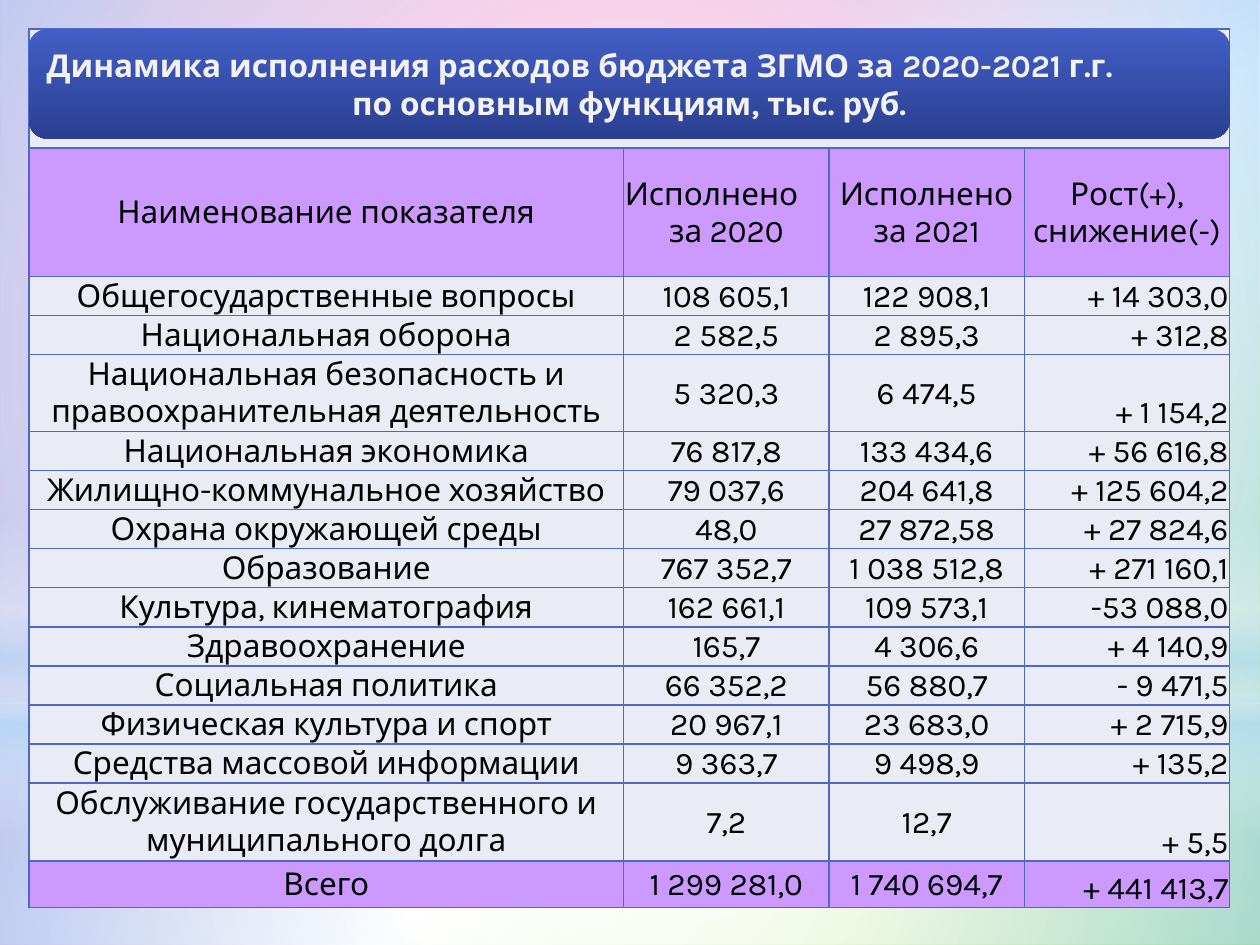
"""Build the budget spending slide: soft backdrop, table of figures and title banner."""
import dataclasses
import typing

import lxml.etree
import pptx
import pptx.dml.color
import pptx.enum.shapes
import pptx.enum.text
import pptx.oxml.ns
import pptx.util

Inches = pptx.util.Inches
Align = pptx.enum.text.PP_ALIGN
Anchor = pptx.enum.text.MSO_ANCHOR
Kind = pptx.enum.shapes.MSO_SHAPE
FONT = "Karla"
PALE, LILAC, BLUE = "E9EBF5", "CC99FF", "4E67C8"
LEFT, TOP, WIDTH = 0.23, 0.23, 9.53
COLS = [4.72, 1.63, 1.55, 1.63]
LINE = 0.31
BLANKS = 3


class Stop(typing.NamedTuple):
    """A gradient stop: place, colour and opacity in percent."""
    pos: int
    color: str
    alpha: int = 100


@dataclasses.dataclass
class Panel:
    """A gradient shape; without an angle the gradient is radial."""
    kind: Kind
    box: tuple[float, float, float, float]
    stops: list[Stop]
    angle: int | None = None


@dataclasses.dataclass
class Row:
    """A table row: texts, height and fill."""
    texts: list[str]
    height: float = LINE
    fill: str = PALE
    head: bool = False


PANELS = [
    Panel(Kind.RECTANGLE, (0, 5.58, 10, 1.92),
          [Stop(0, "FFFFFF", 91), Stop(37, "FFFFFF", 76), Stop(100, "B4DCFA", 79)]),
    Panel(Kind.RECTANGLE, (0, 0, 10, 5.58),
          [Stop(0, "FFFFFF", 89), Stop(48, "FFFFFF", 62), Stop(100, "B4DCFA", 79)]),
    Panel(Kind.RECTANGLE, (0, 4.12, 10, 2.5),
          [Stop(0, "FFFFFF", 0), Stop(29, "FFFFFF", 30), Stop(45, "B4DCFA", 40),
           Stop(55, "FFFFFF", 26), Stop(65, "B4DCFA", 60), Stop(100, "FFFFFF", 0)], 90),
    Panel(Kind.OVAL, (0, 1.75, 10, 5.58), [Stop(0, "FFFFFF"), Stop(56, "FFFFFF", 0)]),
]
BANNER = Panel(Kind.ROUNDED_RECTANGLE, (LEFT, TOP, WIDTH, 0.87),
               [Stop(0, "435EC5"), Stop(100, "2B4092")], 90)
TITLE = [("Динамика исполнения расходов бюджета ЗГМО за 2020-2021 г.г.", Align.LEFT),
         ("по основным функциям, тыс. руб.", Align.CENTER)]
ROWS = [
    Row(["Наименование показателя", "Исполнено\nза 2020", "Исполнено\nза 2021",
         "Рост(+), снижение(-)"], 1.02, LILAC, True),
    Row(["Общегосударственные вопросы", "108 605,1", "122 908,1", "+ 14 303,0"]),
    Row(["Национальная оборона", "2 582,5", "2 895,3", "+ 312,8"]),
    Row(["Национальная безопасность и правоохранительная деятельность",
         "5 320,3", "6 474,5", "+ 1 154,2"], 0.61),
    Row(["Национальная экономика", "76 817,8", "133 434,6", "+ 56 616,8"]),
    Row(["Жилищно-коммунальное хозяйство", "79 037,6", "204 641,8", "+ 125 604,2"]),
    Row(["Охрана окружающей среды", "48,0", "27 872,58", "+ 27 824,6"]),
    Row(["Образование", "767 352,7", "1 038 512,8", "+ 271 160,1"]),
    Row(["Культура, кинематография", "162 661,1", "109 573,1", "-53 088,0"]),
    Row(["Здравоохранение", "165,7", "4 306,6", "+ 4 140,9"]),
    Row(["Социальная политика", "66 352,2", "56 880,7", "- 9 471,5"]),
    Row(["Физическая культура и спорт", "20 967,1", "23 683,0", "+ 2 715,9"]),
    Row(["Средства массовой информации", "9 363,7", "9 498,9", "+ 135,2"]),
    Row(["Обслуживание государственного и муниципального долга",
         "7,2", "12,7", "+ 5,5"], 0.62),
    Row(["Всего", "1 299 281,0", "1 740 694,7", "+ 441 413,7"], 0.37, LILAC),
]


def rgb(color: str) -> pptx.dml.color.RGBColor:
    """Turn a hex string into a colour."""
    return pptx.dml.color.RGBColor.from_string(color)


def node(parent, tag: str, **attrs):
    """Add an XML child with the given attributes."""
    return lxml.etree.SubElement(parent, pptx.oxml.ns.qn(tag),
                                 {key: str(val) for key, val in attrs.items()})


def blend(grad, stops: list[Stop], angle: int | None) -> None:
    """Fill a gradient element with stops and a direction."""
    for child in list(grad):
        grad.remove(child)
    group = node(grad, "a:gsLst")
    for stop in stops:
        color = node(node(group, "a:gs", pos=stop.pos * 1000), "a:srgbClr", val=stop.color)
        if stop.alpha < 100:
            node(color, "a:alpha", val=stop.alpha * 1000)
    if angle is None:
        mid = dict.fromkeys("ltrb", 50000)
        node(node(grad, "a:path", path="circle"), "a:fillToRect", **mid)
    else:
        node(grad, "a:lin", ang=angle * 60000, scaled=0)


def draw(slide, panel: Panel):
    """Draw one gradient panel."""
    shape = slide.shapes.add_shape(panel.kind, *map(Inches, panel.box))
    shape.shadow.inherit = False
    shape.line.fill.background()
    shape.fill.gradient()
    blend(shape.element.xpath("./p:spPr/a:gradFill")[0], panel.stops, panel.angle)
    return shape


def write(para, text: str, align: Align, color: str, bold: bool = False) -> None:
    """Write one run into a paragraph."""
    para.alignment = align
    run = para.add_run()
    run.text = text
    run.font.name, run.font.size, run.font.bold = FONT, pptx.util.Pt(18), bold
    run.font.color.rgb = rgb(color)


def dress(cell, fill: str) -> None:
    """Set the margins, borders and fill of a cell."""
    cell.margin_left = cell.margin_top = cell.margin_right = Inches(0.01)
    cell.margin_bottom = 0
    props = cell._tc.get_or_add_tcPr()
    for side in "LRTB":
        edge = node(props, f"a:ln{side}", w=12700)
        node(node(edge, "a:solidFill"), "a:srgbClr", val=BLUE)
    cell.fill.solid()
    cell.fill.fore_color.rgb = rgb(fill)


def enter(cell, text: str, col: int, head: bool) -> None:
    """Write the text of a cell, with the change column at lower right."""
    last = col == len(COLS) - 1 and not head
    cell.vertical_anchor = Anchor.BOTTOM if last else Anchor.MIDDLE
    frame = cell.text_frame
    for idx, part in enumerate(text.split("\n")):
        para = frame.add_paragraph() if idx else frame.paragraphs[0]
        align = Align.RIGHT if last else Align.CENTER
        if head and col == 1 and idx == 0:
            align = Align.LEFT
        write(para, part, align, "000000")


def chart(slide) -> None:
    """Draw the table of spending."""
    rows = [Row([""] * len(COLS)) for _ in range(BLANKS)] + ROWS
    high = sum(row.height for row in rows)
    box = map(Inches, (LEFT, TOP, WIDTH, high))
    table = slide.shapes.add_table(len(rows), len(COLS), *box).table
    table.first_row = table.horz_banding = False
    for col, width in zip(table.columns, COLS):
        col.width = Inches(width)
    for num, row in enumerate(rows):
        table.rows[num].height = Inches(row.height)
        for col, text in enumerate(row.texts):
            cell = table.cell(num, col)
            dress(cell, row.fill)
            if text:
                enter(cell, text, col, row.head)
        if num < BLANKS:
            table.cell(num, 0).merge(table.cell(num, len(COLS) - 1))


def main() -> None:
    """Build and save the slide."""
    deck = pptx.Presentation()
    deck.slide_width, deck.slide_height = Inches(10), Inches(7.5)
    slide = deck.slides.add_slide(deck.slide_layouts[6])
    slide.background.fill.gradient()
    blend(slide.element.xpath(".//p:bgPr/a:gradFill")[0],
          [Stop(0, "EA8AC8"), Stop(39, "EA8AC8"), Stop(60, "FFFFFF"), Stop(100, "81D31A")], 45)
    for panel in PANELS:
        draw(slide, panel)
    chart(slide)
    frame = draw(slide, BANNER).text_frame
    frame.word_wrap = True
    frame.vertical_anchor = Anchor.MIDDLE
    for idx, (text, align) in enumerate(TITLE):
        para = frame.add_paragraph() if idx else frame.paragraphs[0]
        write(para, text, align, "F2F2F2", True)
    deck.save("out.pptx")


if __name__ == "__main__":
    main()
